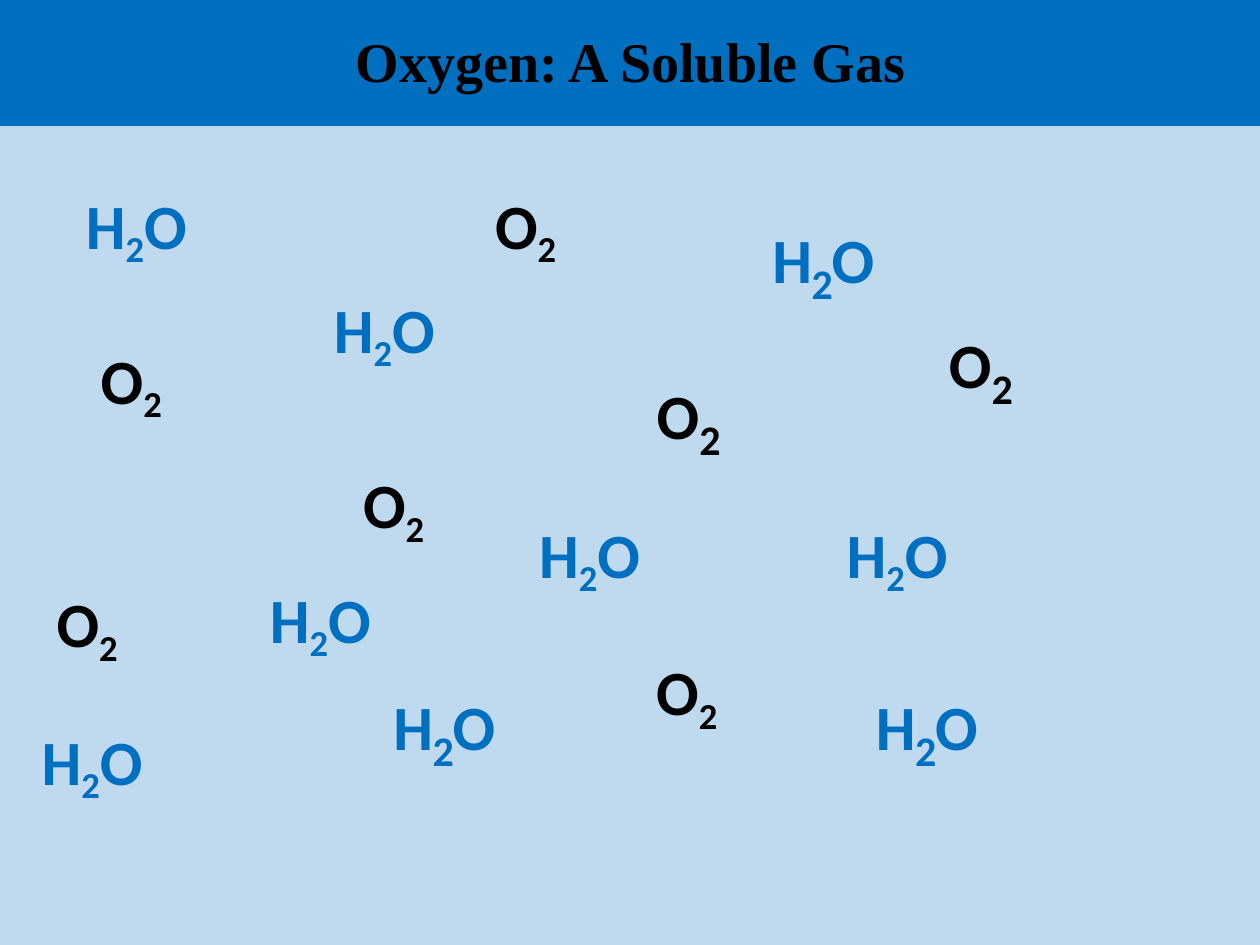
from pptx import Presentation
from pptx.dml.color import RGBColor
from pptx.enum.shapes import MSO_SHAPE
from pptx.enum.text import MSO_ANCHOR, MSO_AUTO_SIZE, PP_ALIGN
from pptx.oxml import parse_xml
from pptx.oxml.ns import nsdecls, qn
from pptx.util import Cm, Pt

RECTANGLE = MSO_SHAPE.RECTANGLE
TOP = MSO_ANCHOR.TOP
LEFT = PP_ALIGN.LEFT
FIT = MSO_AUTO_SIZE.SHAPE_TO_FIT_TEXT

BLUE = "006FC0"
BLACK = "000000"


def color(value):
    return RGBColor.from_string(value)


class PageBuilder:
    body_font = "Calibri"
    title_font = "Times New Roman"
    symbol_size = 36
    digit_size = 24
    subscript = "-21000"
    gap_spacing = "300"

    def __init__(self, page):
        self.page = page

    def band(self, top, height, opacity=100):
        shape = self.page.shapes.add_shape(RECTANGLE, 0, Cm(top), Cm(25.4), Cm(height))
        shape.shadow.inherit = False
        shape.fill.solid()
        shape.fill.fore_color.rgb = color(BLUE)
        shape.line.fill.background()
        if opacity < 100:
            fill = shape.fill.fore_color._xFill.find(qn("a:srgbClr"))
            fill.append(parse_xml(f'<a:alpha {nsdecls("a")} val="{opacity * 1000}"/>'))

    def place(self, box, left, top, width, height):
        box.left, box.top, box.width, box.height = map(Cm, (left, top, width, height))
        frame = box.text_frame
        frame.margin_left = frame.margin_right = frame.margin_bottom = 0
        frame.margin_top = Cm(0.03)
        frame.word_wrap = True
        frame.auto_size = FIT
        frame.vertical_anchor = TOP
        paragraph = frame.paragraphs[0]
        paragraph.alignment = LEFT
        paragraph.space_before = Pt(1)
        return paragraph

    def format(self, paragraph, name, size, value):
        font = paragraph.font
        font.name, font.size, font.bold = name, Pt(size), True
        font.color.rgb = color(value)

    def indent(self, paragraph, margin, first_line=0):
        properties = paragraph._p.get_or_add_pPr()
        properties.set("marL", str(Cm(margin)))
        properties.set("indent", str(Cm(first_line)))

    def title(self, text, left, top, width, height):
        box = self.page.shapes.title
        self.page.shapes._spTree.append(box._element)
        paragraph = self.place(box, left, top, width, height)
        paragraph.text = text
        self.indent(paragraph, 0.03)
        self.format(paragraph, self.title_font, 32, BLACK)

    def label(self, left, top, width, height, value, size=symbol_size, margin=0.03):
        box = self.page.shapes.add_textbox(0, 0, 0, 0)
        paragraph = self.place(box, left, top, width, height)
        self.indent(paragraph, margin)
        self.format(paragraph, self.body_font, size, value)
        return paragraph

    def formula(self, paragraph, text):
        spans = []
        for character in text:
            span = paragraph.add_run()
            span.text = character
            if character.isdigit():
                span.font._element.set("baseline", self.subscript)
            spans.append(span)
        return spans

    def molecule(self, text, value, left, top, width):
        paragraph = self.label(left, top, width, 1.6, value, margin=0.1)
        self.formula(paragraph, text)

    def split_molecule(self, text, value, left, top, width, digit_offset):
        symbols = self.label(left, top, width, 1.6, value)
        for span in self.formula(symbols, text):
            if span.text == " ":
                span.font._element.set("spc", self.gap_spacing)
        digit = self.label(left + digit_offset, top + 0.74, 0.51, 1.09, value, self.digit_size)
        digit.add_run().text = "2"

    def molecule_pair(self, left, top, width, height):
        paragraph = self.label(left, top, width, height, BLACK)
        self.indent(paragraph, 0.28, 1.88)
        paragraph.line_spacing = 1.37
        self.formula(paragraph, "O2 ")
        for span in self.formula(paragraph, "H2O"):
            span.font.color.rgb = color(BLUE)


def main():
    deck = Presentation()
    deck.slide_width, deck.slide_height = Cm(25.4), Cm(19.05)
    builder = PageBuilder(deck.slides.add_slide(deck.slide_layouts[5]))

    builder.band(0, 2.54)
    builder.band(2.34, 16.71, opacity=25)
    builder.title("Oxygen: A Soluble Gas", 7.14, 0.51, 11.15, 1.42)

    water = [(1.63, 3.73), (6.63, 5.82), (0.74, 14.53), (16.97, 10.36), (10.77, 10.36)]
    for left, top in water:
        builder.molecule("H2O", BLUE, left, top, 2.31)

    oxygen = [(9.88, 3.73), (13.13, 13.13), (1.04, 11.76), (1.93, 6.86)]
    for left, top in oxygen:
        builder.molecule("O2", BLACK, left, top, 1.5)

    for left, top in [(7.9, 13.84), (17.63, 13.84), (15.54, 4.42)]:
        builder.split_molecule("H O", BLUE, left, top, 2.16, 0.79)

    for left, top in [(19.1, 6.53), (13.21, 7.57)]:
        builder.split_molecule("O", BLACK, left, top, 0.94, 0.86)

    builder.molecule_pair(5.16, 8.74, 3.56, 4.24)
    deck.save("out.pptx")


if __name__ == "__main__":
    main()
